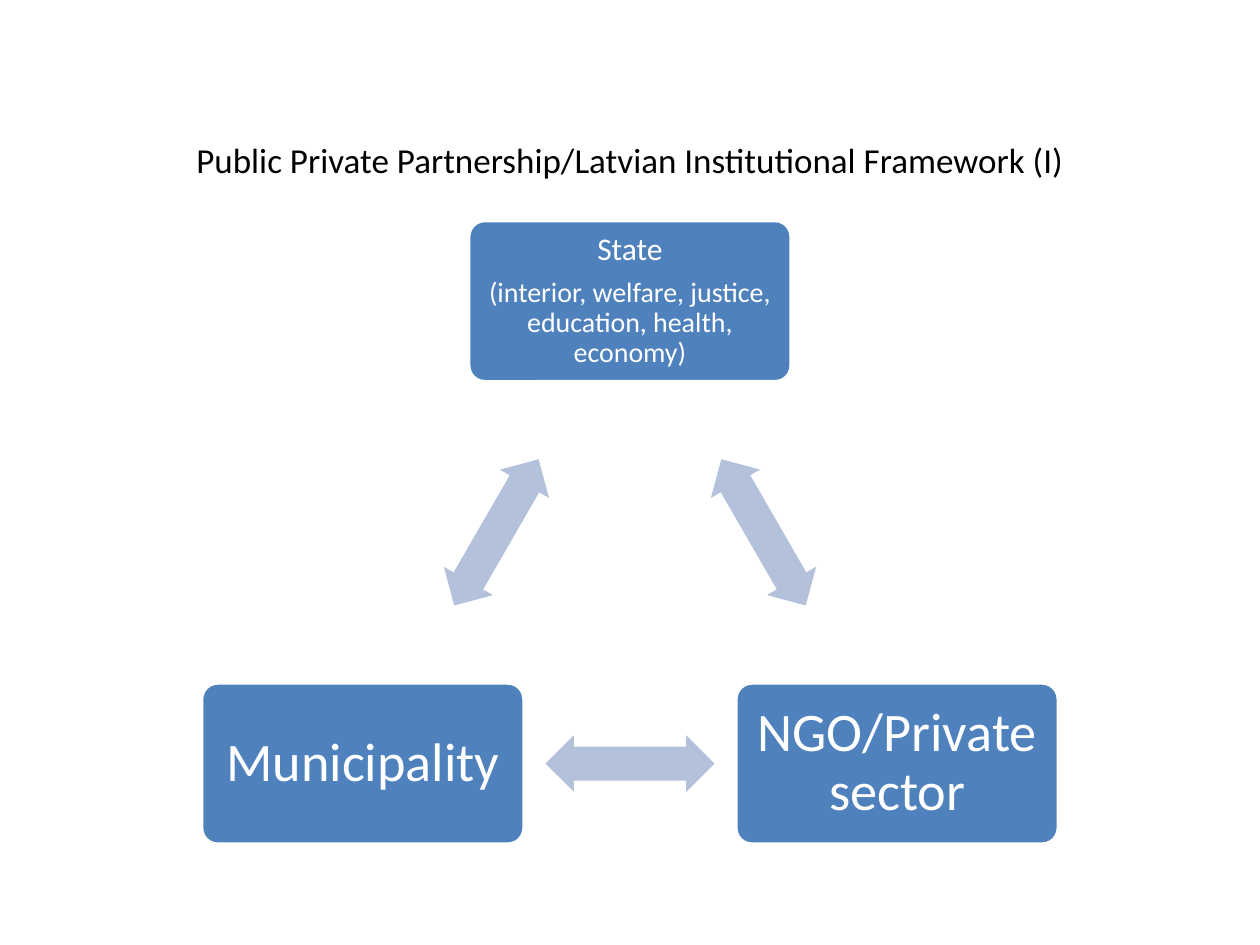
from pptx import Presentation
from pptx.dml.color import RGBColor
from pptx.enum.shapes import MSO_SHAPE as Shape
from pptx.enum.text import MSO_ANCHOR as Anchor, PP_ALIGN as Align
from pptx.util import Inches, Pt

BLUE, PALE, WHITE, BLACK = "4F81BD", "B3C1DB", "FFFFFF", "000000"
STATE, SECTOR, TOWN = (5, 2.39), (7.12, 6.06), (2.88, 6.06)
BOXES = [
    (STATE, 0.07, [
        ("State", 18),
        ("(interior, welfare, justice, education, health, economy)", 16),
    ]),
    (SECTOR, 0.13, [("NGO/Private sector", 31)]),
    (TOWN, 0.13, [("Municipality", 31)]),
]
ARROWS = [(STATE, SECTOR, 60), (SECTOR, TOWN, 180), (TOWN, STATE, 300)]


def color(code):
    return RGBColor.from_string(code)


def apply(item, values):
    for name, value in values.items():
        setattr(item, name, value)


def write(para, text, size, code):
    para.alignment = Align.CENTER
    run = para.add_run()
    run.text = text
    apply(run.font, {"name": "Calibri", "size": Pt(size), "bold": False})
    run.font.color.rgb = color(code)


def add_title(slide, text):
    title = slide.shapes.title
    apply(title, {"left": Inches(0.5), "top": Inches(0.3),
                  "width": Inches(9), "height": Inches(1.25)})
    frame = title.text_frame
    apply(frame, {"word_wrap": True, "vertical_anchor": Anchor.BOTTOM,
                  "margin_bottom": Inches(0.12)})
    write(frame.paragraphs[0], text, 20, BLACK)


def add_shape(slide, kind, mid, size, fill):
    (x, y), (wide, high) = mid, size
    shape = slide.shapes.add_shape(
        kind, Inches(x - wide / 2), Inches(y - high / 2),
        Inches(wide), Inches(high))
    shape.shadow.inherit = False
    shape.fill.solid()
    shape.fill.fore_color.rgb = color(fill)
    return shape


def add_box(slide, mid, inset, lines):
    box = add_shape(slide, Shape.ROUNDED_RECTANGLE, mid, (2.56, 1.28), BLUE)
    box.adjustments[0] = 0.1
    box.line.color.rgb = color(WHITE)
    box.line.width = Pt(2)
    frame = box.text_frame
    apply(frame, {"word_wrap": True, "vertical_anchor": Anchor.MIDDLE})
    apply(frame, {f"margin_{side}": Inches(inset)
                  for side in ("left", "top", "right", "bottom")})
    for i, (text, size) in enumerate(lines):
        para = frame.add_paragraph() if i else frame.paragraphs[0]
        apply(para, {"line_spacing": 0.9, "space_after": Pt(0.35 * size)})
        write(para, text, size, WHITE)


def add_arrow(slide, start, end, angle):
    mid = [(a + b) / 2 for a, b in zip(start, end)]
    arrow = add_shape(slide, Shape.LEFT_RIGHT_ARROW, mid, (1.34, 0.45), PALE)
    arrow.adjustments[0] = 0.6
    arrow.adjustments[1] = 0.5
    arrow.line.fill.background()
    arrow.rotation = angle


def main():
    deck = Presentation()
    apply(deck, {"slide_width": Inches(10), "slide_height": Inches(7.5)})
    slide = deck.slides.add_slide(deck.slide_layouts[5])
    add_title(slide, "Public Private Partnership/Latvian Institutional Framework (I)")
    for box in BOXES:
        add_box(slide, *box)
    for arrow in ARROWS:
        add_arrow(slide, *arrow)
    deck.save("out.pptx")


if __name__ == "__main__":
    main()
